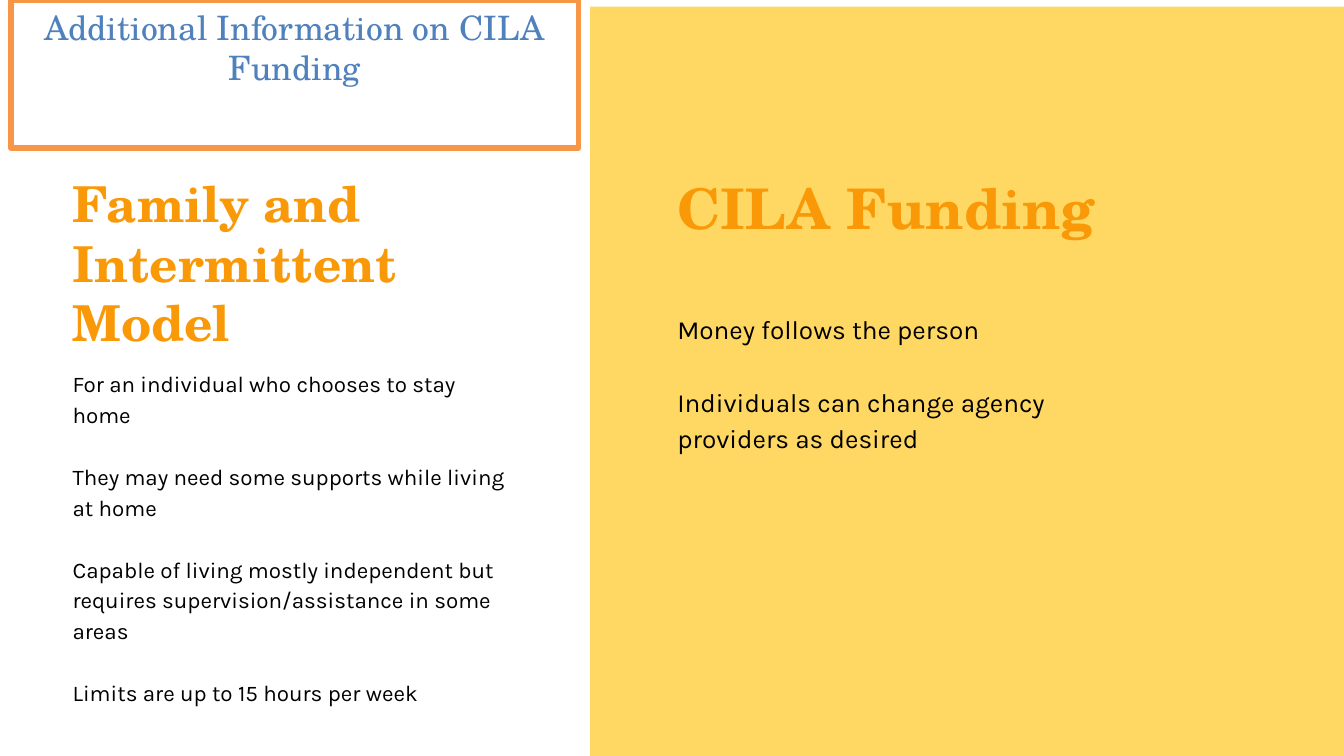
from dataclasses import dataclass

from pptx import Presentation
from pptx.dml.color import RGBColor
from pptx.enum import shapes, text
from pptx.util import Inches, Pt

COLORS = {
    "panel": "FFD863",
    "heading": "FA9908",
    "body": "000000",
    "banner_line": "F79646",
    "banner_text": "4F81BD",
}
SERIF = "TeX Gyre Schola"
SANS = "Karla"
LINE_SPACING = 1.15
BLANK_LINE_RATIO = 1.38
COLUMN_TOP = 2.58


@dataclass
class Area:
    left: float
    top: float
    width: float
    height: float

    def lengths(self):
        return [Inches(n) for n in (self.left, self.top, self.width, self.height)]


@dataclass
class Column:
    heading: str
    heading_size: int
    heading_area: Area
    points: list[str]
    point_size: int
    points_area: Area


COLUMNS = [
    Column(
        "Family and Intermittent Model", 53, Area(1.08, COLUMN_TOP, 6.61, 2.74),
        [
            "For an individual who chooses to stay home",
            "They may need some supports while living at home",
            "Capable of living mostly independent but requires "
            "supervision/assistance in some areas",
            "Limits are up to 15 hours per week",
        ],
        24, Area(1.08, 5.45, 6.61, 5.05),
    ),
    Column(
        "CILA Funding", 60, Area(10.08, COLUMN_TOP, 7.28, 1.01),
        [
            "Money follows the person",
            "Individuals can change agency providers as desired",
        ],
        28, Area(10.08, 4.6, 7.03, 3.18),
    ),
]


def color(name: str) -> RGBColor:
    return RGBColor.from_string(COLORS[name])


def write(box, lines: list[str], *, font: str, size: int, tint: str,
          bold: bool = False, align=text.PP_ALIGN.LEFT, inset: float = 0,
          spacing: float = 1.0, gap: float = 0) -> None:
    frame = box.text_frame
    frame.word_wrap = True
    frame.vertical_anchor = text.MSO_ANCHOR.TOP
    frame.margin_left = frame.margin_right = Inches(inset)
    frame.margin_top = frame.margin_bottom = Inches(inset)
    for index, line in enumerate(lines):
        para = frame.add_paragraph() if index else frame.paragraphs[0]
        para.alignment = align
        para.line_spacing = spacing
        if index:
            para.space_before = Pt(gap)
        span = para.add_run()
        span.text = line
        span.font.name = font
        span.font.size = Pt(size)
        span.font.bold = bold
        span.font.color.rgb = color(tint)


def add_rectangle(page, area: Area):
    box = page.shapes.add_shape(shapes.MSO_SHAPE.RECTANGLE, *area.lengths())
    box.shadow.inherit = False
    return box


def add_panel(page) -> None:
    panel = add_rectangle(page, Area(8.78, 0.1, 11.22, 11.25))
    panel.fill.solid()
    panel.fill.fore_color.rgb = color("panel")
    panel.line.fill.background()


def add_banner(page) -> None:
    banner = add_rectangle(page, Area(0.16, 0, 8.45, 2.2))
    banner.fill.background()
    banner.line.color.rgb = color("banner_line")
    banner.line.width = Pt(6)
    write(banner, ["Additional Information on CILA Funding"], font=SERIF, size=36,
          tint="banner_text", align=text.PP_ALIGN.CENTER, inset=0.1)


def add_column(page, column: Column) -> None:
    heading = page.shapes.add_textbox(*column.heading_area.lengths())
    write(heading, [column.heading], font=SERIF, size=column.heading_size,
          tint="heading", bold=True)
    points = page.shapes.add_textbox(*column.points_area.lengths())
    write(points, column.points, font=SANS, size=column.point_size, tint="body",
          spacing=LINE_SPACING, gap=column.point_size * BLANK_LINE_RATIO)


def main() -> None:
    deck = Presentation()
    deck.slide_width = Inches(20)
    deck.slide_height = Inches(11.25)
    page = deck.slides.add_slide(deck.slide_layouts[6])
    add_panel(page)
    add_banner(page)
    for column in COLUMNS:
        add_column(page, column)
    deck.save("out.pptx")


if __name__ == "__main__":
    main()
